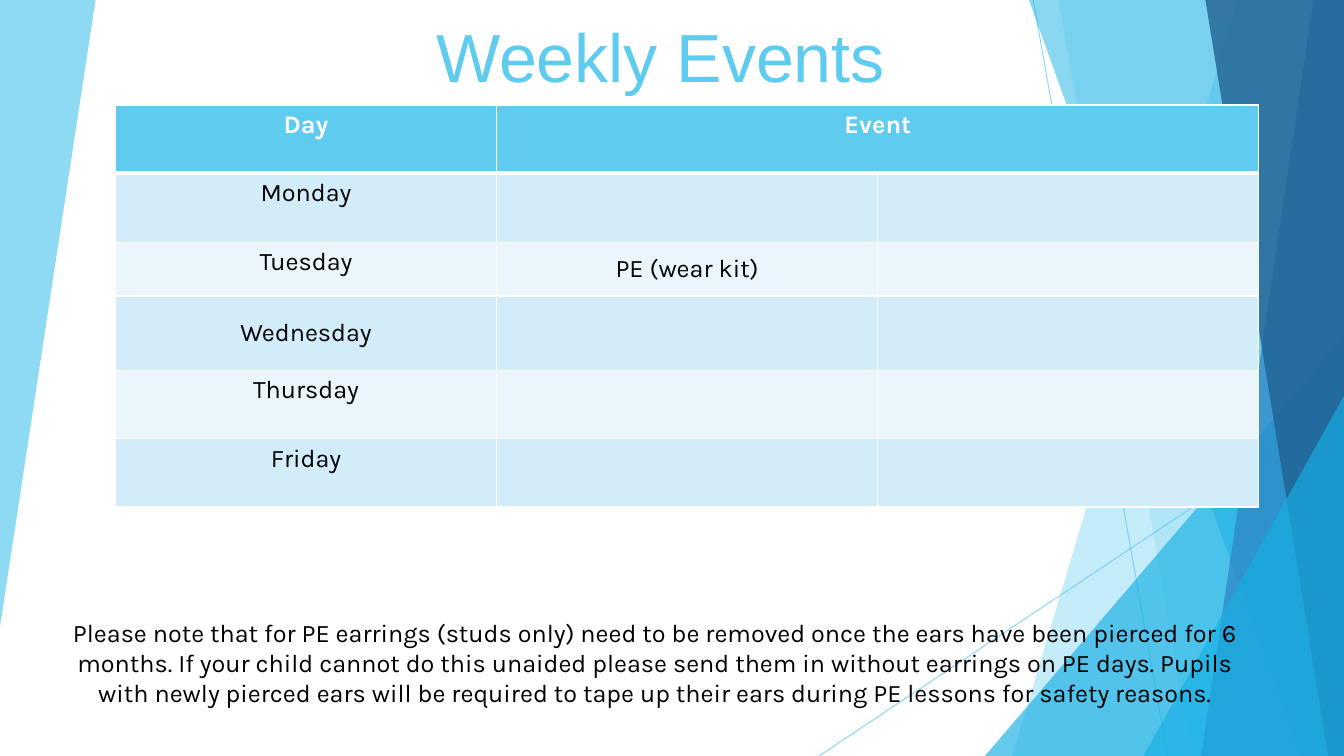
from dataclasses import dataclass

from lxml.etree import SubElement as Sub
from pptx import Presentation
from pptx.dml.color import RGBColor as Rgb
from pptx.enum.shapes import MSO_CONNECTOR as Link, MSO_SHAPE as Kind
from pptx.enum.text import MSO_ANCHOR as Anchor, PP_ALIGN as Align
from pptx.oxml import parse_xml
from pptx.oxml.ns import nsdecls, qn
from pptx.util import Pt

PX = 9525
WIDE, HIGH = 1280, 720

SKY = Rgb(0x5F, 0xCB, 0xEF)
CYAN = Rgb(0x17, 0xB0, 0xE4)
BLUE = Rgb(0x2E, 0x83, 0xC3)
NAVY = Rgb(0x22, 0x62, 0x92)
PALE = Rgb(0xD2, 0xEC, 0xF9)
MIST = Rgb(0xEA, 0xF6, 0xFC)
WHITE = Rgb(255, 255, 255)
BLACK = Rgb(0, 0, 0)


@dataclass
class Shard:
    points: list[tuple[int, int]]
    color: Rgb
    alpha: int


@dataclass
class Wedge:
    left: int
    top: int
    color: Rgb
    alpha: int


@dataclass
class Ray:
    start: tuple[int, int]
    end: tuple[int, int]
    color: Rgb
    alpha: int


@dataclass
class Label:
    text: str
    box: tuple[int, int, int, int]
    size: float
    font: str
    color: Rgb
    align: Align
    anchor: Anchor


@dataclass
class Day:
    name: str
    high: int
    event: str = ""
    anchor: Anchor = Anchor.TOP


def band(top: int, foot: int, color: Rgb, alpha: int) -> Shard:
    """Make a shard that runs from its slanted left edge to the slide's right side."""
    return Shard([(top, 0), (WIDE, 0), (WIDE, HIGH), (foot, HIGH)], color, alpha)


DECOR = [
    Shard([(0, 0), (91, 0), (0, 597)], SKY, 70),
    Ray((984, 0), (1112, HIGH), SKY, 70),
    Ray((WIDE, 387), (780, HIGH), SKY, 70),
    band(1179, 964, SKY, 36),
    band(1008, 1136, SKY, 20),
    Wedge(938, 320, CYAN, 66),
    band(980, 1239, CYAN, 50),
    band(1251, 1144, BLUE, 70),
    band(1148, 1265, NAVY, 80),
    Wedge(1089, 377, CYAN, 66),
]

TITLE = Label("Weekly Events", (12, 11, 840, 85), 48.6, "Arial", SKY,
              Align.RIGHT, Anchor.BOTTOM)
NOTE = Label(
    "Please note that for PE earrings (studs only) need to be removed once the "
    "ears have been pierced for 6 months. If your child cannot do this unaided "
    "please send them in without earrings on PE days. Pupils with newly pierced "
    "ears will be required to tape up their ears during PE lessons for safety "
    "reasons.",
    (42, 583, 1164, 126), 18, "Karla", BLACK, Align.CENTER, Anchor.TOP)

DAYS = [
    Day("Day", 65, "Event"),
    Day("Monday", 66),
    Day("Tuesday", 51, "PE (wear kit)"),
    Day("Wednesday", 71, anchor=Anchor.MIDDLE),
    Day("Thursday", 65),
    Day("Friday", 65),
]
COLS, COL = 3, 363


def fade(fill, color: Rgb, alpha: int, node) -> None:
    """Give a fill a colour of the given opacity in percent."""
    fill.solid()
    fill.fore_color.rgb = color
    tint = next(node.iter(qn("a:srgbClr")))
    Sub(tint, qn("a:alpha"), val=str(alpha * 1000))


def draw(shapes, item: Shard | Wedge | Ray) -> None:
    if isinstance(item, Ray):
        ends = [n * PX for n in item.start + item.end]
        line = shapes.add_connector(Link.STRAIGHT, *ends)
        line.line.width = Pt(0.75)
        fade(line.line.fill, item.color, item.alpha, line.element.spPr)
        Sub(line.element.spPr, qn("a:effectLst"))
        return
    if isinstance(item, Wedge):
        size = WIDE - item.left, HIGH - item.top
        box = [n * PX for n in (item.left, item.top, *size)]
        shape = shapes.add_shape(Kind.ISOSCELES_TRIANGLE, *box)
        shape.adjustments[0] = 1
    else:
        pen = shapes.build_freeform(*item.points[0], scale=PX)
        pen.add_line_segments(item.points[1:], close=True)
        shape = pen.convert_to_shape()
    shape.shadow.inherit = False
    fade(shape.fill, item.color, item.alpha, shape.element.spPr)
    shape.line.fill.background()


def style(frame, text: str, size: float, font: str, color: Rgb,
          align: Align, bold: bool = False) -> None:
    frame.text = text
    para = frame.paragraphs[0]
    para.alignment = align
    for run in para.runs:
        run.font.size = Pt(size)
        run.font.name = font
        run.font.color.rgb = color
        run.font.bold = bold


def write(shapes, label: Label) -> None:
    frame = shapes.add_textbox(*[n * PX for n in label.box]).text_frame
    frame.word_wrap = True
    frame.vertical_anchor = label.anchor
    style(frame, label.text, label.size, label.font, label.color, label.align)


def edge(cell, row: int) -> None:
    """Add white borders, thick between the header and the days."""
    props = cell._tc.get_or_add_tcPr()
    thick = {(0, "B"), (1, "T")}
    for spot, side in enumerate("LRTB"):
        width = Pt(3 if (row, side) in thick else 1)
        props.insert(spot, parse_xml(
            f'<a:ln{side} {nsdecls("a")} w="{width}"><a:solidFill>'
            f'<a:srgbClr val="{WHITE}"/></a:solidFill></a:ln{side}>'))


def plan(shapes) -> None:
    """Draw the table of the week."""
    high = sum(day.high for day in DAYS)
    box = [n * PX for n in (110, 100, COLS * COL, high)]
    table = shapes.add_table(len(DAYS), COLS, *box).table
    table.horz_banding = False
    for col in table.columns:
        col.width = COL * PX
    for row, day in enumerate(DAYS):
        table.rows[row].height = day.high * PX
        head = row == 0
        back = SKY if head else PALE if row % 2 else MIST
        for col, text in enumerate((day.name, day.event, "")):
            cell = table.cell(row, col)
            cell.fill.solid()
            cell.fill.fore_color.rgb = back
            style(cell.text_frame, text, 18, "Karla",
                  WHITE if head else BLACK, Align.CENTER, head)
            middle = col == 1 and not head
            cell.vertical_anchor = Anchor.MIDDLE if middle else day.anchor
            edge(cell, row)
    table.cell(0, 1).merge(table.cell(0, 2))


def main() -> None:
    deck = Presentation()
    deck.slide_width, deck.slide_height = WIDE * PX, HIGH * PX
    shapes = deck.slides.add_slide(deck.slide_layouts[6]).shapes
    for item in DECOR:
        draw(shapes, item)
    write(shapes, TITLE)
    plan(shapes)
    write(shapes, NOTE)
    deck.save("out.pptx")


if __name__ == "__main__":
    main()
